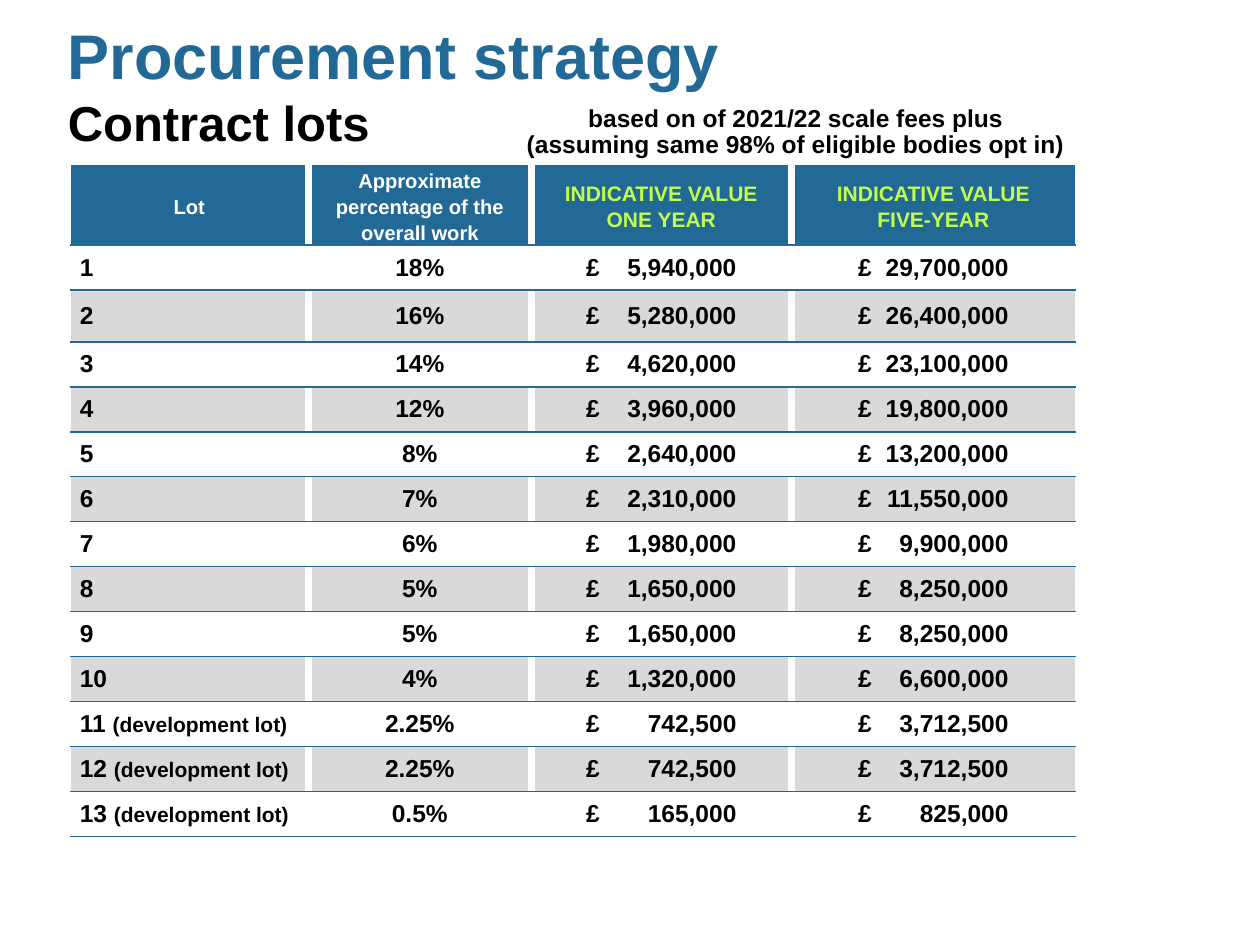
from lxml.etree import SubElement as Sub
from pptx import Presentation
from pptx.dml.color import RGBColor as Rgb
from pptx.enum.text import MSO_ANCHOR as Anchor, PP_ALIGN as Align
from pptx.oxml.ns import qn
from pptx.util import Pt

HUES = {"blue": "236995", "lime": "C2FF4D", "grey": "D9D9D9",
        "white": "FFFFFF", "black": "000000"}
SHARES = [18, 16, 14, 12, 8, 7, 6, 5, 5, 4, 2.25, 2.25, 0.5]
POINT = 330000
YEARS = (1, 5)
FIRST_DEV = 11
WIDTHS = [136, 127.5, 148.5, 162.5]
HEAD_H, ROW_H, TALL_H = 45, 25.7, 29.7
SUM_W = 86
HEADS = [
    (["Lot"], 11.5, "white"),
    (["Approximate percentage of the overall work"], 11.5, "white"),
    (["INDICATIVE VALUE", "ONE YEAR"], 12, "lime"),
    (["INDICATIVE VALUE", "FIVE-YEAR"], 12, "lime"),
]


def style(font, size, hue):
    font.name = "Arial"
    font.size = Pt(size)
    font.bold = True
    font.color.rgb = Rgb.from_string(HUES[hue])


def write(frame, lines, align=Align.LEFT, lead=None):
    for i, (text, size, hue) in enumerate(lines):
        para = frame.add_paragraph() if i else frame.paragraphs[0]
        para.text = text
        para.alignment = align
        if lead:
            para.line_spacing = Pt(lead)
        style(para.font, size, hue)


def add_box(slide, box, lines, anchor=Anchor.TOP, **kind):
    frame = slide.shapes.add_textbox(*map(Pt, box)).text_frame
    frame.word_wrap = True
    frame.vertical_anchor = anchor
    write(frame, lines, **kind)


def add_edge(cell, side, hue, width):
    line = Sub(cell._tc.get_or_add_tcPr(), qn(f"a:ln{side}"), w=str(Pt(width)))
    fill = Sub(line, qn("a:solidFill"))
    Sub(fill, qn("a:srgbClr"), val=HUES[hue])


def dress(cell, col, hue):
    if col > 0:
        add_edge(cell, "L", "white", 4.5)
    if col < len(WIDTHS) - 1:
        add_edge(cell, "R", "white", 4.5)
    for side in "TB":
        add_edge(cell, side, "blue", 1)
    cell.fill.solid()
    cell.fill.fore_color.rgb = Rgb.from_string(HUES[hue])
    cell.vertical_anchor = Anchor.MIDDLE
    cell.margin_left = cell.margin_right = Pt(5.4)
    cell.margin_top = cell.margin_bottom = 0


def fill_lot(cell, lot):
    para = cell.text_frame.paragraphs[0]
    parts = [(str(lot), 14)]
    if lot >= FIRST_DEV:
        parts = [(f"{lot} ", 14), ("(development lot)", 12)]
    for text, size in parts:
        run = para.add_run()
        run.text = text
        style(run.font, size, "black")


def fill_sum(cell, width, value):
    cell.margin_left = Pt((width - SUM_W) / 2)
    cell.margin_right = 0
    props = cell.text_frame.paragraphs[0]._p.get_or_add_pPr()
    tabs = Sub(props, qn("a:tabLst"))
    Sub(tabs, qn("a:tab"), pos=str(Pt(SUM_W)), algn="r")
    write(cell.text_frame, [(f"£\t{value:,.0f}", 14, "black")])


def add_lots(slide, left, top):
    heights = [HEAD_H] + [ROW_H] * len(SHARES)
    heights[2] = TALL_H
    box = (left, top, sum(WIDTHS), sum(heights))
    table = slide.shapes.add_table(
        len(heights), len(WIDTHS), *map(Pt, box)).table
    table.first_row = table.horz_banding = False
    for col, width in zip(table.columns, WIDTHS):
        col.width = Pt(width)
    for row, height in zip(table.rows, heights):
        row.height = Pt(height)
    for col, (lines, size, hue) in enumerate(HEADS):
        cell = table.cell(0, col)
        dress(cell, col, "blue")
        write(cell.text_frame, [(text, size, hue) for text in lines],
              Align.CENTER, 15)
    for lot, share in enumerate(SHARES, 1):
        cells = table.rows[lot].cells
        for col, cell in enumerate(cells):
            dress(cell, col, "white" if lot % 2 else "grey")
        fill_lot(cells[0], lot)
        write(cells[1].text_frame, [(f"{share}%", 14, "black")], Align.CENTER)
        for col, years in enumerate(YEARS, 2):
            fill_sum(cells[col], WIDTHS[col], share * POINT * years)


def main():
    deck = Presentation()
    deck.slide_width, deck.slide_height = Pt(720), Pt(540)
    slide = deck.slides.add_slide(deck.slide_layouts[6])
    add_box(slide, (31.7, 3, 688, 90),
            [("Procurement strategy", 36, "blue"),
             ("Contract lots", 28, "black")], Anchor.MIDDLE)
    add_lots(slide, 40.2, 95)
    add_box(slide, (266.4, 57, 376.6, 37.4),
            [("based on of 2021/22 scale fees plus", 14, "black"),
             ("(assuming same 98% of eligible bodies opt in)", 14, "black")],
            align=Align.CENTER, lead=15)
    deck.save("out.pptx")


if __name__ == "__main__":
    main()
